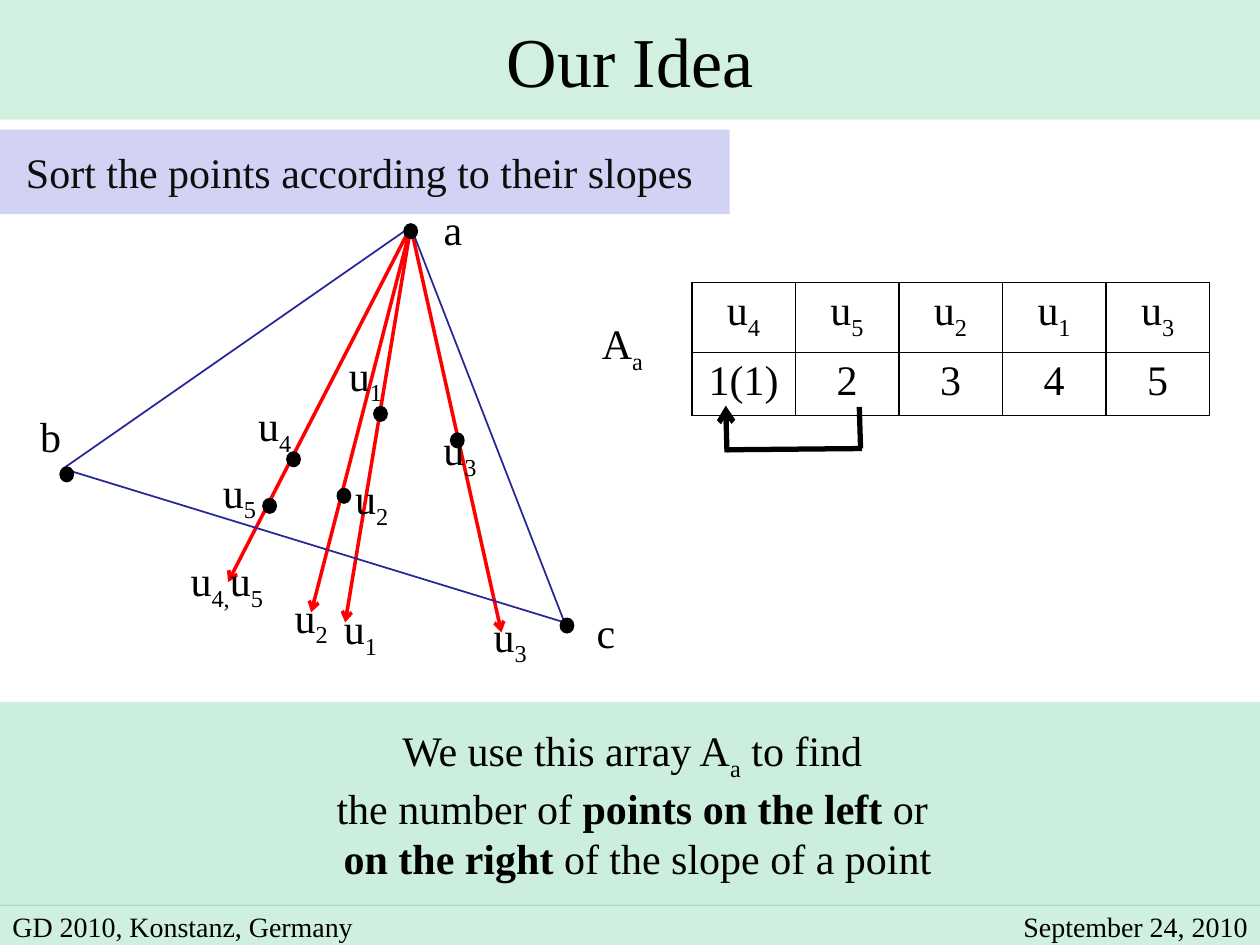
from dataclasses import dataclass

from lxml import etree
from pptx import Presentation
from pptx.dml.color import RGBColor
from pptx.enum.shapes import MSO_CONNECTOR, MSO_SHAPE
from pptx.enum.text import MSO_ANCHOR, MSO_AUTO_SIZE, PP_ALIGN
from pptx.oxml.ns import qn
from pptx.util import Inches, Pt

RECTANGLE, ROUNDED, OVAL = MSO_SHAPE.RECTANGLE, MSO_SHAPE.ROUNDED_RECTANGLE, MSO_SHAPE.OVAL
STRAIGHT = MSO_CONNECTOR.STRAIGHT
LEFT, CENTER, RIGHT = PP_ALIGN.LEFT, PP_ALIGN.CENTER, PP_ALIGN.RIGHT
MIDDLE = MSO_ANCHOR.MIDDLE
NO_AUTOFIT = MSO_AUTO_SIZE.NONE


@dataclass(frozen=True)
class Theme:
    font: str = "Times New Roman"
    title_size: int = 40
    body_size: int = 24
    footer_size: int = 16
    ink: str = "000000"
    soft_ink: str = "0D0D0D"
    green: str = "00B050"
    mint: str = "CCEEDF"
    lavender: str = "D2D2F4"
    ray: str = "FF0000"
    triangle: str = "262699"


THEME = Theme()


def inches(*values):
    return [Inches(value) for value in values]


def sub(text):
    return (text, "sub")


def bold(text):
    return (text, "bold")


def point(number):
    return ["u", sub(str(number))]


def write(frame, *lines, size=THEME.body_size, color=THEME.ink, align=CENTER, indent=0):
    """Fill a text frame; a line is a list of strings and sub() or bold() runs."""
    frame.word_wrap = True
    for index, line in enumerate(lines):
        paragraph = frame.add_paragraph() if index else frame.paragraphs[0]
        paragraph.alignment = align
        if indent:
            properties = paragraph._p.get_or_add_pPr()
            properties.set("marL", str(Inches(indent)))
            properties.set("indent", "0")
        for part in line:
            text, style = part if isinstance(part, tuple) else (part, "")
            run = paragraph.add_run()
            run.text = text
            run.font.name = THEME.font
            run.font.size = Pt(size)
            run.font.color.rgb = RGBColor.from_string(color)
            run.font.bold = style == "bold"
            if style == "sub":
                run.font._element.set("baseline", "-25000")


def paint(shape, color, opacity=100):
    shape.fill.solid()
    shape.fill.fore_color.rgb = RGBColor.from_string(color)
    if opacity < 100:
        rgb = shape._element.spPr.find(f"{qn('a:solidFill')}/{qn('a:srgbClr')}")
        etree.SubElement(rgb, qn("a:alpha")).set("val", str(opacity * 1000))


def add_panel(shapes, kind, box, color, opacity=100):
    panel = shapes.add_shape(kind, *inches(*box))
    panel.shadow.inherit = False
    paint(panel, color, opacity)
    panel.line.fill.background()
    panel.text_frame.vertical_anchor = MIDDLE
    return panel


def add_label(shapes, box, line, **text_format):
    frame = shapes.add_textbox(*inches(*box)).text_frame
    frame.vertical_anchor = MIDDLE
    write(frame, line, **text_format)


def add_line(shapes, start, end, color, width, arrow=False):
    connector = shapes.add_connector(STRAIGHT, *inches(*start, *end))
    connector.line.color.rgb = RGBColor.from_string(color)
    connector.line.width = Pt(width)
    if arrow:
        etree.SubElement(connector.line._get_or_add_ln(), qn("a:tailEnd")).set("type", "arrow")
    etree.SubElement(connector._element.spPr, qn("a:effectLst"))


def add_title(slide, box):
    title = slide.shapes.title
    title.left, title.top, title.width, title.height = inches(*box)
    paint(title, THEME.green, 18)
    frame = title.text_frame
    frame.auto_size = NO_AUTOFIT
    frame.vertical_anchor = MIDDLE
    write(frame, ["Our Idea"], size=THEME.title_size)
    frame.word_wrap = False


def add_subtitle(slide, box):
    band = add_panel(slide.shapes, ROUNDED, box, THEME.lavender)
    band.adjustments[0] = 0
    write(band.text_frame, ["Sort the points according to their slopes "], color=THEME.soft_ink)


def add_diagram(slide, left, top):
    """Triangle abc with rays from a through the inner points."""
    shapes = slide.shapes

    def at(x, y):
        return left + x, top + y

    a, b, c = at(3.26, 0.1), at(0.5, 2.02), at(4.48, 3.24)

    # Rays
    for x, y in [(3.98, 3.32), (1.81, 2.92), (2.47, 3.16), (2.74, 3.24)]:
        add_line(shapes, a, at(x, y), THEME.ray, 2, arrow=True)

    # Triangle
    builder = shapes.build_freeform(*inches(*b))
    builder.add_line_segments([inches(*corner) for corner in (a, c)], close=True)
    triangle = builder.convert_to_shape()
    triangle.shadow.inherit = False
    triangle.fill.background()
    triangle.line.color.rgb = RGBColor.from_string(THEME.triangle)
    triangle.line.width = Pt(1)

    # Points: a, c, b, u4, u3, u5, u1, u2
    for x, y in [(3.21, 0.08), (4.45, 3.21), (0.48, 2.01), (2.28, 1.89),
                 (3.58, 1.74), (2.09, 2.26), (2.97, 1.53), (2.68, 2.18)]:
        dot = add_panel(shapes, OVAL, (*at(x, y), 0.1, 0.11), THEME.ink)
        dot.line.color.rgb = RGBColor.from_string(THEME.ink)
        dot.line.width = Pt(1.25)

    # Corner names
    for name, x, y, width, height in [("a", 3.43, 0.02, 0.19, 0.19),
                                      ("c", 4.61, 3.19, 0.4, 0.25),
                                      ("b", 0.22, 1.66, 0.2, 0.19)]:
        add_label(shapes, (*at(x, y), width, height), [name])

    # Names of the inner points, then of the rays
    for number, x, y in [(1, 2.64, 1.13), (2, 2.69, 2.11), (3, 3.39, 1.72),
                         (4, 1.92, 1.53), (5, 1.64, 2.06),
                         (1, 2.6, 3.14), (2, 2.21, 3.05), (3, 3.79, 3.2)]:
        add_label(shapes, (*at(x, y), 0.52, 0.34), point(number))
    add_label(shapes, (*at(1.21, 2.73), 1.18, 0.4), ["u", sub("4,"), *point(5)])


def add_array(slide, left, top):
    """Array of sorted points, its name, and the arrow back to rank 1."""
    add_label(slide.shapes, (left, top, 1.08, 1.02), ["A", sub("a")])

    rows = [[point(number) for number in (4, 5, 2, 1, 3)],
            [[rank] for rank in ("1(1)", "2", "3", "4", "5")]]
    frame = slide.shapes.add_table(2, 5, *inches(left + 1.09, top, 4.11, 0.99))
    table = frame.table
    table.first_row = table.horz_banding = False
    for row, height in zip(table.rows, (0.52, 0.47)):
        row.height = Inches(height)
    for row, lines in zip(table.rows, rows):
        for cell, line in zip(row.cells, lines):
            write(cell.text_frame, line)
            properties = cell._tc.get_or_add_tcPr()
            for side in ("a:lnL", "a:lnR", "a:lnT", "a:lnB"):
                border = etree.SubElement(properties, qn(side), w=str(Pt(1)))
                fill = etree.SubElement(border, qn("a:solidFill"))
                etree.SubElement(fill, qn("a:srgbClr"), val=THEME.ink)
            cell.fill.background()

    arrow = slide.shapes.add_group_shape().shapes
    for start, end, head in [((1.37, 1.33), (2.44, 1.32), False),
                             ((2.43, 1.32), (2.42, 0.99), False),
                             ((1.37, 1.35), (1.36, 0.98), True)]:
        add_line(arrow, (left + start[0], top + start[1]),
                 (left + end[0], top + end[1]), THEME.ink, 3, arrow=head)


def add_conclusion(slide, box):
    panel = add_panel(slide.shapes, RECTANGLE, box, THEME.mint)
    write(panel.text_frame,
          ["We use this array A", sub("a"), " to find "],
          ["the number of ", bold("points on the left"), " or "],
          [bold("on the right"), " of the slope of a point"],
          indent=0.12)


def add_footer(slide, box):
    left, top, width, height = box
    shapes = slide.shapes.add_group_shape().shapes
    add_panel(shapes, RECTANGLE, box, THEME.green, 19)
    for text, text_width, align in [("GD 2010, Konstanz, Germany", 3.11, LEFT),
                                    ("September 24, 2010", 2.23, RIGHT)]:
        x = left if align == LEFT else left + width - text_width
        add_label(shapes, (x, top - 0.08, text_width, 0.51), [text],
                  size=THEME.footer_size, align=align)


def main():
    presentation = Presentation()
    presentation.slide_width, presentation.slide_height = inches(10, 7.5)
    slide = presentation.slides.add_slide(presentation.slide_layouts[5])
    add_title(slide, (0, 0, 10, 0.95))
    add_subtitle(slide, (0, 1.03, 5.79, 0.67))
    add_diagram(slide, 0, 1.7)
    add_array(slide, 4.4, 2.24)
    add_conclusion(slide, (0, 5.57, 10, 1.62))
    add_footer(slide, (0, 7.18, 10, 0.32))
    presentation.save("out.pptx")


if __name__ == "__main__":
    main()
